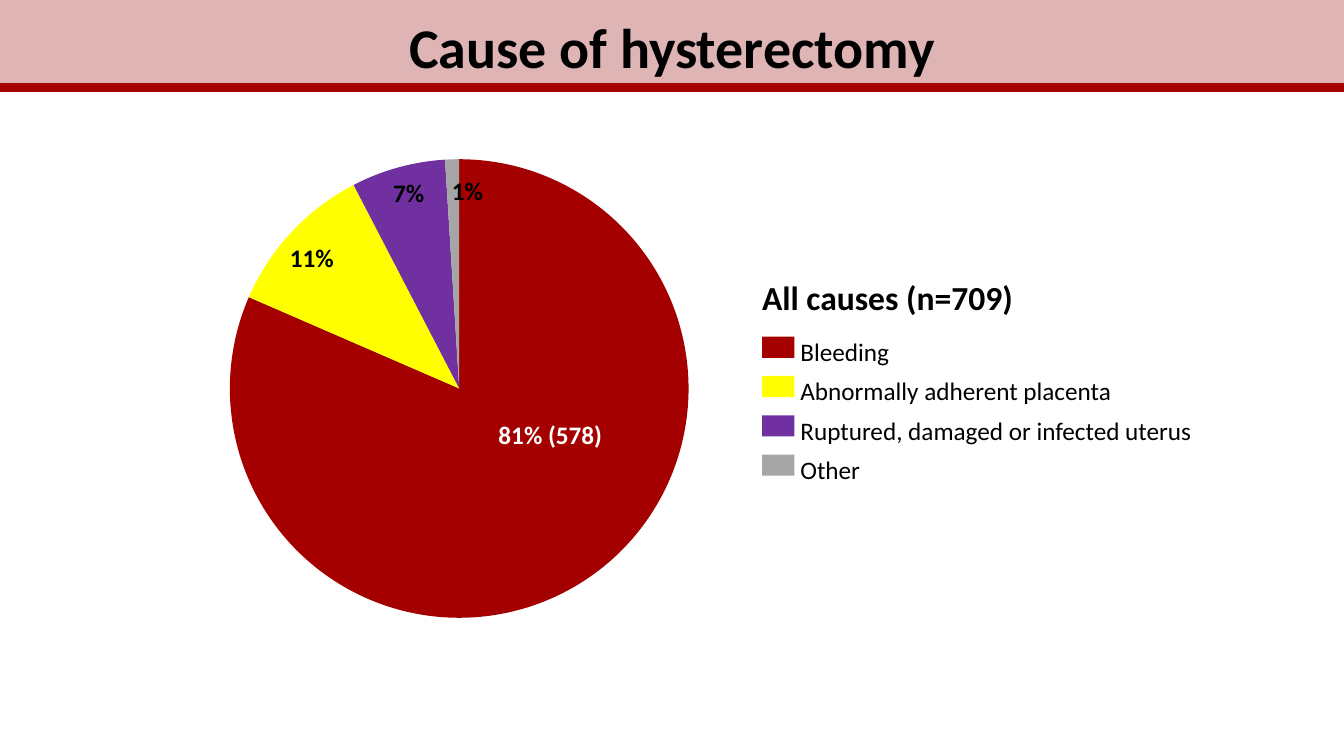
from dataclasses import dataclass

from lxml import etree
from pptx import Presentation
from pptx.chart.data import CategoryChartData
from pptx.dml.color import RGBColor
from pptx.enum.chart import XL_CHART_TYPE, XL_LABEL_POSITION
from pptx.enum.shapes import MSO_CONNECTOR, MSO_SHAPE
from pptx.enum.text import MSO_ANCHOR, PP_ALIGN
from pptx.oxml import parse_xml
from pptx.oxml.ns import nsdecls, qn
from pptx.util import Inches, Pt

FONT = "Calibri"
BLACK, WHITE, RED, PINK = "000000", "FFFFFF", "A40000", "DEB4B4"
CHART_WIDTH, CHART_HEIGHT = 8.16, 5.35
PIE_LEFT, PIE_TOP, PIE_SIZE = 1.53, 0.5, 4.55  # inches inside the chart


@dataclass
class Cause:
    name: str
    count: int
    color: str
    label: str
    shift: tuple[float, float]  # inches from the default label place
    label_color: str = BLACK
    position: XL_LABEL_POSITION = XL_LABEL_POSITION.INSIDE_END


CAUSES = [
    Cause("Bleeding", 578, RED, "81% (578)", (0.28, -0.48), WHITE, XL_LABEL_POSITION.CENTER),
    Cause("Abnormally adherent placenta", 77, "FFFF00", "11%", (-0.06, 0.07)),
    Cause("Ruptured, damaged or infected uterus", 47, "7030A0", " 7%", (-0.12, 0.05)),
    Cause("Other", 7, "A6A6A6", "1%", (0.15, 0.11)),
]


def rgb(color: str) -> RGBColor:
    return RGBColor.from_string(color)


def style_font(font, size: float, color: str = BLACK, bold: bool = False) -> None:
    font.name = FONT
    font.size = Pt(size)
    font.bold = bold
    font.color.rgb = rgb(color)


def layout_xml(left: float, top: float, size: float | None = None):
    """Manual chart layout in inches; with a size it places the inner plot area."""
    settings = [("x", left / CHART_WIDTH), ("y", top / CHART_HEIGHT)]
    if size:
        settings = [("layoutTarget", "inner"), ("xMode", "edge"), ("yMode", "edge"),
                    *settings, ("w", size / CHART_WIDTH), ("h", size / CHART_HEIGHT)]
    body = "".join(f'<c:{tag} val="{value}"/>' for tag, value in settings)
    return parse_xml(f'<c:layout {nsdecls("c")}><c:manualLayout>{body}'
                     "</c:manualLayout></c:layout>")


def add_bar(slide, left: float, top: float, width: float, height: float, color: str):
    bar = slide.shapes.add_shape(MSO_SHAPE.RECTANGLE, Inches(left), Inches(top),
                                 Inches(width), Inches(height))
    bar.shadow.inherit = False
    bar.fill.solid()
    bar.fill.fore_color.rgb = rgb(color)
    bar.line.fill.background()
    return bar


def add_lines(slide, left: float, top: float, width: float, height: float,
              lines: list[str], size: float, bold: bool = False,
              spacing: float | None = None) -> None:
    box = slide.shapes.add_textbox(Inches(left), Inches(top), Inches(width), Inches(height))
    frame = box.text_frame
    frame.word_wrap = True
    frame.text = "\n".join(lines)
    for paragraph in frame.paragraphs:
        style_font(paragraph.font, size, bold=bold)
        if spacing:
            paragraph.line_spacing = Pt(spacing)


def add_pie(slide) -> None:
    data = CategoryChartData()
    data.categories = [str(number) for number in range(1, len(CAUSES) + 1)]
    data.add_series("Series 1", [cause.count for cause in CAUSES])
    chart = slide.shapes.add_chart(XL_CHART_TYPE.PIE, Inches(0.75), Inches(1.08),
                                   Inches(CHART_WIDTH), Inches(CHART_HEIGHT), data).chart
    chart.has_title = False
    chart.has_legend = False
    chart.font.name = "Arial"
    chart.font.size = Pt(10)
    chart.font.color.rgb = rgb(BLACK)

    plot = chart.plots[0]
    plot.vary_by_categories = True
    series = plot.series[0]
    labels = series.data_labels
    labels.show_value = True
    labels.show_percentage = True
    style_font(labels.font, 18, bold=True)
    for index, cause in enumerate(CAUSES):
        point = series.points[index]
        point.format.fill.solid()
        point.format.fill.fore_color.rgb = rgb(cause.color)
        point.format.line.fill.background()
        label = point.data_label
        run = label.text_frame.paragraphs[0].add_run()
        run.text = cause.label
        style_font(run.font, 18, cause.label_color, bold=True)
        label.position = cause.position

    chart_xml = series._element.getroottree().getroot()
    for cause, label_xml in zip(CAUSES, chart_xml.iter(qn("c:dLbl"))):
        label_xml.insert(1, layout_xml(*cause.shift))
        label_xml.find(qn("c:showPercent")).set("val", "1")
    plot_area = next(chart_xml.iter(qn("c:plotArea")))
    for default_layout in plot_area.findall(qn("c:layout")):
        plot_area.remove(default_layout)
    plot_area.insert(0, layout_xml(PIE_LEFT, PIE_TOP, PIE_SIZE))


def add_legend(slide) -> None:
    add_lines(slide, 7.46, 2.7, 3.06, 0.5, ["All causes (n=709)"], 24, bold=True)
    for index, cause in enumerate(CAUSES):
        add_bar(slide, 7.56, 3.34 + 0.39 * index, 0.32, 0.21, cause.color)
    add_lines(slide, 7.84, 3.2, 4.13, 1.74, [cause.name for cause in CAUSES], 18, spacing=28)


def add_header(slide) -> None:
    header = add_bar(slide, 0, 0, 13.33, 0.91, PINK)
    frame = header.text_frame
    frame.vertical_anchor = MSO_ANCHOR.MIDDLE
    frame.text = "Cause of hysterectomy"
    title = frame.paragraphs[0]
    title.alignment = PP_ALIGN.CENTER
    style_font(title.font, 40, bold=True)

    rule = slide.shapes.add_connector(MSO_CONNECTOR.STRAIGHT, Inches(0), Inches(0.87),
                                      Inches(13.33), Inches(0.87))
    rule.line.color.rgb = rgb(RED)
    rule.line.width = Pt(6)
    etree.SubElement(rule._element.spPr, qn("a:effectLst"))


def main() -> None:
    presentation = Presentation()
    presentation.slide_width = Inches(13.33)
    presentation.slide_height = Inches(7.5)
    slide = presentation.slides.add_slide(presentation.slide_layouts[6])
    add_pie(slide)
    add_legend(slide)
    add_header(slide)
    presentation.save("out.pptx")


if __name__ == "__main__":
    main()
